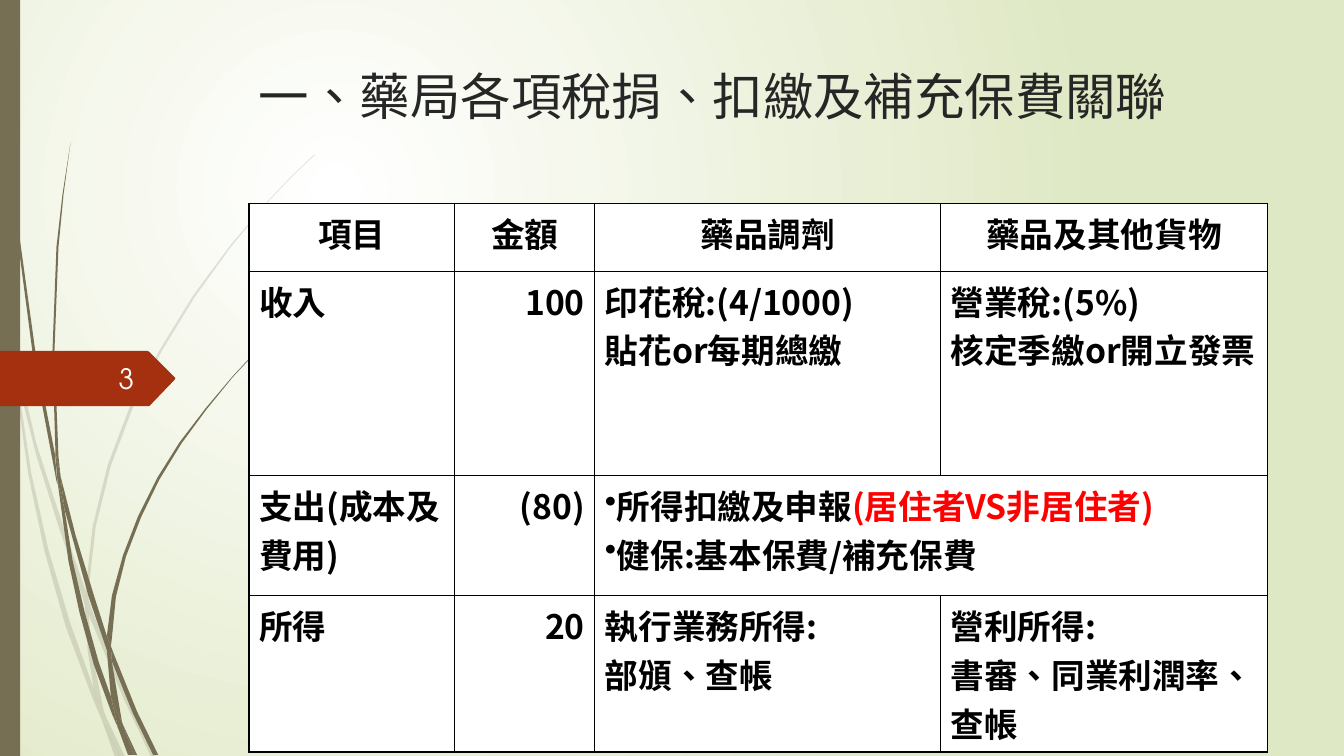
import pptx
import pptx.util
import pptx.dml.color
import pptx.enum.lang
import pptx.enum.shapes
import pptx.enum.text
import pptx.oxml
import pptx.oxml.ns
from pptx.util import Inches
from lxml import etree

COLORS = {
    "white": "FFFFFF", "meadow": "DFE8C4", "bark": "766F54", "rust": "A53010",
    "title": "262626", "black": "000000", "red": "FF0000", "number": "FEFFFF",
}
HAN_FONT = "Noto Sans CJK SC"
NUMBER_FONT = "TeX Gyre Adventor"
ALIGN = {
    "l": pptx.enum.text.PP_ALIGN.LEFT,
    "c": pptx.enum.text.PP_ALIGN.CENTER,
    "r": pptx.enum.text.PP_ALIGN.RIGHT,
}

PALE_BLADES = [
    [(0.11, 3.5), (0.09, 3.22), (0, 2.82), (0, 2.99), (0.1, 3.44)],
    [(0.58, 5.22), (0.84, 5.99), (0.85, 5.86), (0.62, 5.2), (0.36, 4.4), (0.14, 3.45),
     (0.17, 3.76), (0.36, 4.52)],
    [(0.92, 6.07), (0.88, 5.96), (0.88, 6.1), (1.23, 6.94), (1.5, 7.51), (1.55, 7.51),
     (1.27, 6.92)],
    [(1.19, 7.51), (1.24, 7.51), (1.05, 7.11)],
    [(0.93, 6.83), (0.7, 6.19), (0.48, 5.45), (0.31, 4.69), (0.17, 3.76), (0.11, 3.5),
     (0.28, 4.7), (0.44, 5.46), (0.65, 6.21), (0.92, 6.93), (1.01, 7.14), (0.99, 7.07)],
    [(0.84, 5.99), (0.87, 6.46), (0.93, 6.83), (0.96, 6.92), (1.05, 7.11), (1.03, 7.06),
     (0.91, 6.46), (0.88, 6.1), (0.88, 6.08)],
    [(0.88, 5.84), (0.95, 5.22), (1.1, 4.62), (1.32, 4.04), (1.6, 3.49), (1.93, 2.95),
     (2.29, 2.45), (2.68, 1.98), (2.9, 1.75), (3.12, 1.54), (3.12, 1.53), (2.89, 1.75),
     (2.68, 1.97), (2.28, 2.44), (1.91, 2.94), (1.58, 3.48), (1.29, 4.03), (1.07, 4.61),
     (0.92, 5.22), (0.85, 5.84), (0.85, 5.86), (0.88, 5.96)],
    [(1.01, 7.14), (1.14, 7.51), (1.19, 7.51)],
    [(0.88, 6.08), (0.88, 6.1), (0.88, 5.96), (0.85, 5.86), (0.84, 5.99)],
    [(0.96, 6.92), (0.93, 6.83), (0.99, 7.07), (1.01, 7.14), (1.19, 7.51), (1.05, 7.11)],
]
DARK_BLADES = [
    [(0.07, 1.1), (0.17, 2.33), (0.33, 3.55), (0.56, 4.77), (0.57, 4.81), (0.55, 4.57),
     (0.55, 4.53), (0.36, 3.55), (0.19, 2.32), (0.08, 1.09), (0.05, 0.48), (0.04, 0),
     (0.03, 0), (0.04, 0.48)],
    [(0.88, 5.92), (1.06, 6.45), (1.06, 6.33), (1.06, 6.31), (0.93, 5.9), (0.75, 5.31),
     (0.6, 4.72), (0.64, 5.05)],
    [(1.13, 6.49), (1.1, 6.41), (1.11, 6.56), (1.32, 7.08), (1.52, 7.49), (1.57, 7.49),
     (1.36, 7.06)],
    [(1.1, 6.91), (0.98, 6.57), (0.84, 6.07), (0.72, 5.56), (0.64, 5.05), (0.57, 4.77),
     (0.68, 5.57), (0.79, 6.08), (0.93, 6.59), (1.11, 7.08), (1.17, 7.22), (1.16, 7.17)],
    [(0.6, 4.72), (0.58, 4.53), (0.54, 3.49), (0.58, 2.45), (0.63, 1.93), (0.7, 1.41),
     (0.62, 1.93), (0.56, 2.45), (0.52, 3.49), (0.55, 4.49)],
    [(1.33, 7.49), (1.36, 7.49), (1.22, 7.19)],
    [(0.57, 4.77), (0.64, 5.05), (0.6, 4.72), (0.55, 4.49), (0.55, 4.53)],
    [(1.11, 6.33), (1.15, 5.92), (1.25, 5.52), (1.4, 5.13), (1.58, 4.76), (1.8, 4.4),
     (2.05, 4.06), (2.31, 3.74), (2.45, 3.59), (2.61, 3.44), (2.6, 3.44), (2.45, 3.58),
     (2.31, 3.73), (2.04, 4.05), (1.78, 4.39), (1.56, 4.74), (1.37, 5.12), (1.22, 5.51),
     (1.11, 5.91), (1.06, 6.31), (1.1, 6.41)],
    [(1.17, 7.22), (1.27, 7.49), (1.31, 7.49)],
    [(1.06, 6.45), (1.1, 6.91), (1.16, 7.06), (1.22, 7.19), (1.21, 7.16), (1.11, 6.56),
     (1.09, 6.51)],
    [(1.06, 6.45), (1.09, 6.51), (1.11, 6.56), (1.1, 6.41), (1.06, 6.31)],
    [(1.16, 7.06), (1.1, 6.91), (1.16, 7.17), (1.17, 7.22), (1.3, 7.49), (1.33, 7.49),
     (1.22, 7.19)],
]
NUMBER_FLAG = [(1.74, 3.75), (1.73, 3.77), (1.48, 4.03), (1.46, 4.03), (0, 4.03),
               (0, 3.48), (1.46, 3.48), (1.48, 3.49), (1.73, 3.74)]

COLUMN_WIDTHS = [2.04, 1.39, 3.43, 3.24]
ROW_HEIGHTS = [0.67, 2.03, 1.19, 1.55]
TAX_ROWS = [
    [["項目"], ["金額"], ["藥品調劑"], ["藥品及其他貨物"]],
    [["收入"], ["100"], ["印花稅:(4/1000)", "貼花or每期總繳"],
     ["營業稅:(5%)", "核定季繳or開立發票"]],
    [["支出(成本及費用)"], ["(80)"],
     [[("所得扣繳及申報", "black"), ("(居住者VS非居住者)", "red")], "健保:基本保費/補充保費"], []],
    [["所得"], ["20"], ["執行業務所得:", "部頒、查帳"],
     ["營利所得:", "書審、同業利潤率、查帳"]],
]
EXPENSE_ROW = 2


def rgb(name):
    return pptx.dml.color.RGBColor.from_string(COLORS[name])


def add_node(parent, tag, **attributes):
    return etree.SubElement(parent, pptx.oxml.ns.qn(tag), attributes)


def write_text(paragraph, text, size=24, font=HAN_FONT, color="black", bold=False,
               align="l", bullet=False):
    paragraph.alignment = ALIGN[align]
    if bullet:
        properties = paragraph._p.get_or_add_pPr()
        properties.set("marL", "0")
        properties.set("indent", str(Inches(-0.31)))
        add_node(properties, "a:buChar", char="•")
    pieces = [(text, color)] if isinstance(text, str) else text
    for words, shade in pieces:
        run = paragraph.add_run()
        run.text = words
        run.font.size = pptx.util.Pt(size)
        run.font.name = font
        run.font.bold = bold
        run.font.color.rgb = rgb(shade)
        run.font.language_id = pptx.enum.lang.MSO_LANGUAGE_ID.TRADITIONAL_CHINESE
        add_node(run.font._element, "a:ea", typeface=font)


def add_text_box(slide, box, text, anchor, **text_format):
    shape = slide.shapes.add_textbox(*map(Inches, box))
    shape.text_frame.word_wrap = True
    shape.text_frame.vertical_anchor = anchor
    write_text(shape.text_frame.paragraphs[0], text, **text_format)


def paint(shape, color):
    shape.shadow.inherit = False
    shape.fill.solid()
    shape.fill.fore_color.rgb = rgb(color)
    shape.line.fill.background()


def add_outline(shapes, points, color, opacity=100):
    corners = [(Inches(x), Inches(y)) for x, y in points]
    builder = shapes.build_freeform(*corners[0])
    builder.add_line_segments(corners[1:], close=True)
    shape = builder.convert_to_shape()
    paint(shape, color)
    if opacity < 100:
        solid = shape._element.spPr.find(pptx.oxml.ns.qn("a:solidFill"))
        add_node(solid[0], "a:alpha", val=str(opacity * 1000))


def add_blades(slide, blades, opacity):
    group = slide.shapes.add_group_shape()
    for points in blades:
        add_outline(group.shapes, points, "bark", opacity)


def paint_background(slide):
    fill = slide.background.fill
    fill.gradient()
    for stop, color in zip(fill.gradient_stops, ("white", "meadow")):
        stop.color.rgb = rgb(color)
    linear = slide._element.find(".//" + pptx.oxml.ns.qn("a:lin"))
    gradient = linear.getparent()
    gradient.remove(linear)
    radial = add_node(gradient, "a:path", path="circle")
    add_node(radial, "a:fillToRect", l="50000", t="50000", r="100000", b="100000")


def frame_cell(cell):
    properties = cell._tc.get_or_add_tcPr()
    for side in ("a:lnL", "a:lnR", "a:lnT", "a:lnB"):
        border = add_node(properties, side, w=str(pptx.util.Pt(1)))
        add_node(add_node(border, "a:solidFill"), "a:srgbClr", val=COLORS["black"])
    cell.fill.solid()
    cell.fill.fore_color.rgb = rgb("white")


def add_tax_table(slide):
    box = (2.47, 2.02, sum(COLUMN_WIDTHS), sum(ROW_HEIGHTS))
    table = slide.shapes.add_table(len(TAX_ROWS), len(COLUMN_WIDTHS), *map(Inches, box)).table
    table.first_row = False
    table.horz_banding = False
    for column, width in zip(table.columns, COLUMN_WIDTHS):
        column.width = Inches(width)
    for row, height in zip(table.rows, ROW_HEIGHTS):
        row.height = Inches(height)
    for row_index, row in enumerate(TAX_ROWS):
        for column_index, lines in enumerate(row):
            cell = table.cell(row_index, column_index)
            frame_cell(cell)
            align = "c" if row_index == 0 else "r" if column_index == 1 else "l"
            bullet = row_index == EXPENSE_ROW and column_index == 2
            for line_index, line in enumerate(lines):
                frame = cell.text_frame
                paragraph = frame.add_paragraph() if line_index else frame.paragraphs[0]
                write_text(paragraph, line, bold=True, align=align, bullet=bullet)
    table.cell(EXPENSE_ROW, 2).merge(table.cell(EXPENSE_ROW, 3))


def main():
    presentation = pptx.Presentation()
    presentation.slide_width = Inches(13.33)
    presentation.slide_height = Inches(7.5)
    slide = presentation.slides.add_slide(presentation.slide_layouts[6])
    paint_background(slide)
    add_blades(slide, PALE_BLADES, 20)
    add_blades(slide, DARK_BLADES, 100)
    edge_bar = slide.shapes.add_shape(pptx.enum.shapes.MSO_SHAPE.RECTANGLE,
                                      0, 0, Inches(0.2), Inches(7.5))
    paint(edge_bar, "bark")
    add_outline(slide.shapes, NUMBER_FLAG, "rust")
    add_tax_table(slide)
    add_text_box(slide, (2.47, 0.6, 10.11, 0.95), "一、藥局各項稅捐、扣繳及補充保費關聯",
                 pptx.enum.text.MSO_ANCHOR.TOP, size=36, color="title")
    add_text_box(slide, (0.58, 3.55, 0.85, 0.4), "3", pptx.enum.text.MSO_ANCHOR.MIDDLE,
                 size=20, font=NUMBER_FONT, color="number", align="r")
    presentation.save("out.pptx")


if __name__ == "__main__":
    main()
